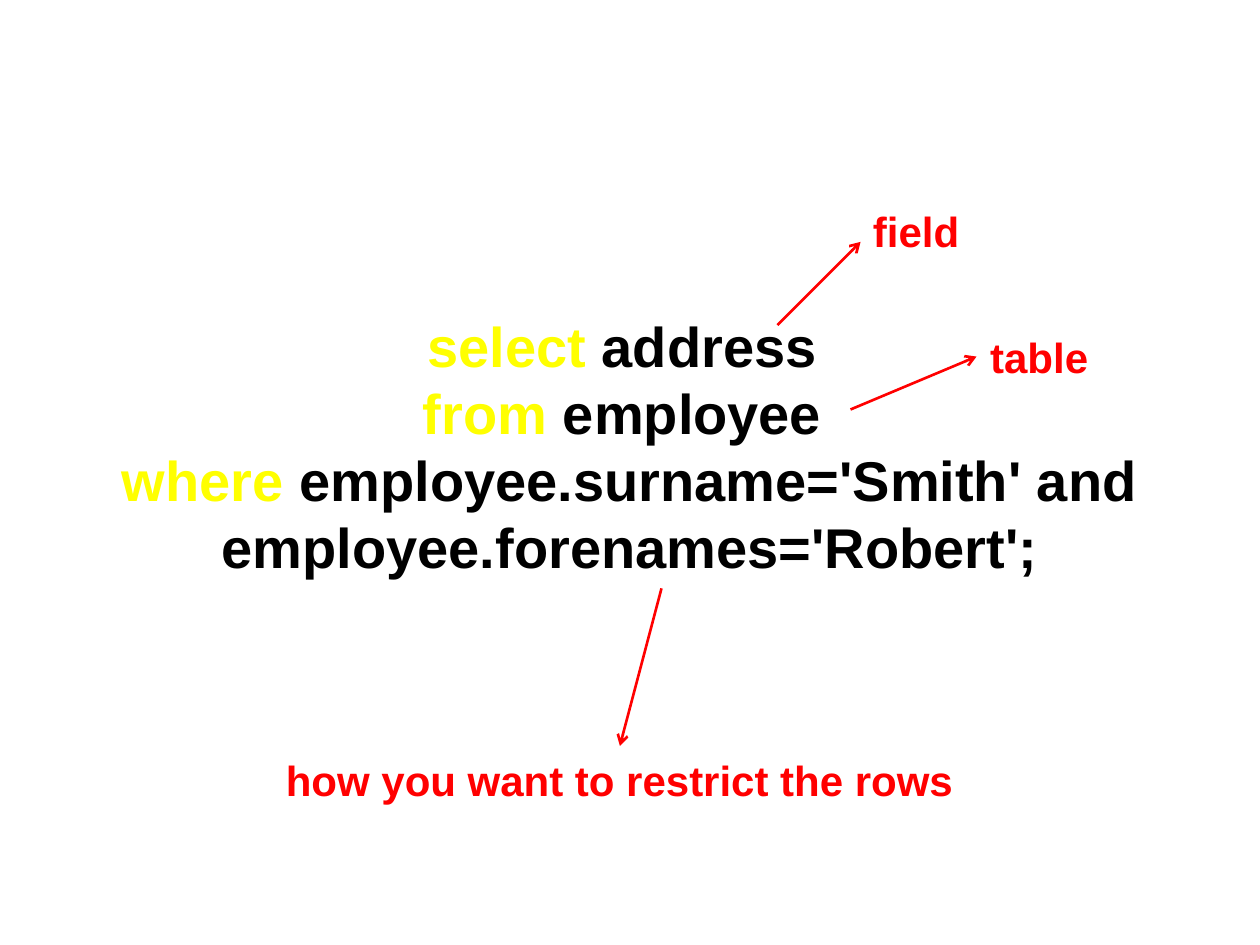
from lxml import etree
from pptx import Presentation
from pptx.dml.color import RGBColor
from pptx.enum import shapes, text
from pptx.oxml import ns
from pptx.util import Inches, Pt

WIDTH, HEIGHT = 10, 7.5
FONT = "Arial"
BLACK = RGBColor(0, 0, 0)
YELLOW = RGBColor(255, 255, 0)
RED = RGBColor(255, 0, 0)

# Content: each query line is a keyword and the rest
QUERY = [
    ("select", " address "),
    ("from", " employee "),
    ("where ", "employee.surname='Smith' and employee.forenames='Robert';"),
]
QUERY_AREA = (0.33, 2.42, 9.34, 2.26)

# Each note: wording, area, arrow start, arrow end
NOTES = [
    ("field", (6.83, 1.58, 0.89, 0.51), (6.17, 2.58), (6.83, 1.92)),
    ("table", (7.76, 2.58, 0.99, 0.51), (6.75, 3.25), (7.75, 2.83)),
    ("how you want to restrict the rows", (2.17, 5.94, 5.55, 0.5),
     (5.25, 4.67), (4.92, 5.92)),
]


def add_text(page, lines, area, size, align=text.PP_ALIGN.LEFT, wrap=False):
    """Add a bold text box; each line is a list of (wording, colour)."""
    box = page.shapes.add_textbox(*map(Inches, area))
    frame = box.text_frame
    frame.word_wrap = wrap
    frame.auto_size = text.MSO_AUTO_SIZE.SHAPE_TO_FIT_TEXT
    for index, line in enumerate(lines):
        para = frame.add_paragraph() if index else frame.paragraphs[0]
        para.alignment = align
        for wording, colour in line:
            span = para.add_run()
            span.text = wording
            span.font.name = FONT
            span.font.size = Pt(size)
            span.font.bold = True
            span.font.color.rgb = colour
    return box


def add_arrow(page, start, end, colour=RED, width=1.5):
    arrow = page.shapes.add_connector(
        shapes.MSO_CONNECTOR.STRAIGHT, *map(Inches, start + end))
    arrow.line.color.rgb = colour
    arrow.line.width = Pt(width)
    etree.SubElement(arrow.line._get_or_add_ln(), ns.qn("a:tailEnd"), type="arrow")
    etree.SubElement(arrow._element.spPr, ns.qn("a:effectLst"))
    return arrow


def main():
    deck = Presentation()
    deck.slide_width, deck.slide_height = Inches(WIDTH), Inches(HEIGHT)
    page = deck.slides.add_slide(deck.slide_layouts[6])

    # Query with highlighted keywords
    lines = [[(keyword, YELLOW), (rest, BLACK)] for keyword, rest in QUERY]
    add_text(page, lines, QUERY_AREA, size=32,
             align=text.PP_ALIGN.CENTER, wrap=True)

    # Notes and their arrows
    for wording, area, start, end in NOTES:
        add_text(page, [[(wording, RED)]], area, size=24)
        add_arrow(page, start, end)

    deck.save("out.pptx")


if __name__ == "__main__":
    main()
